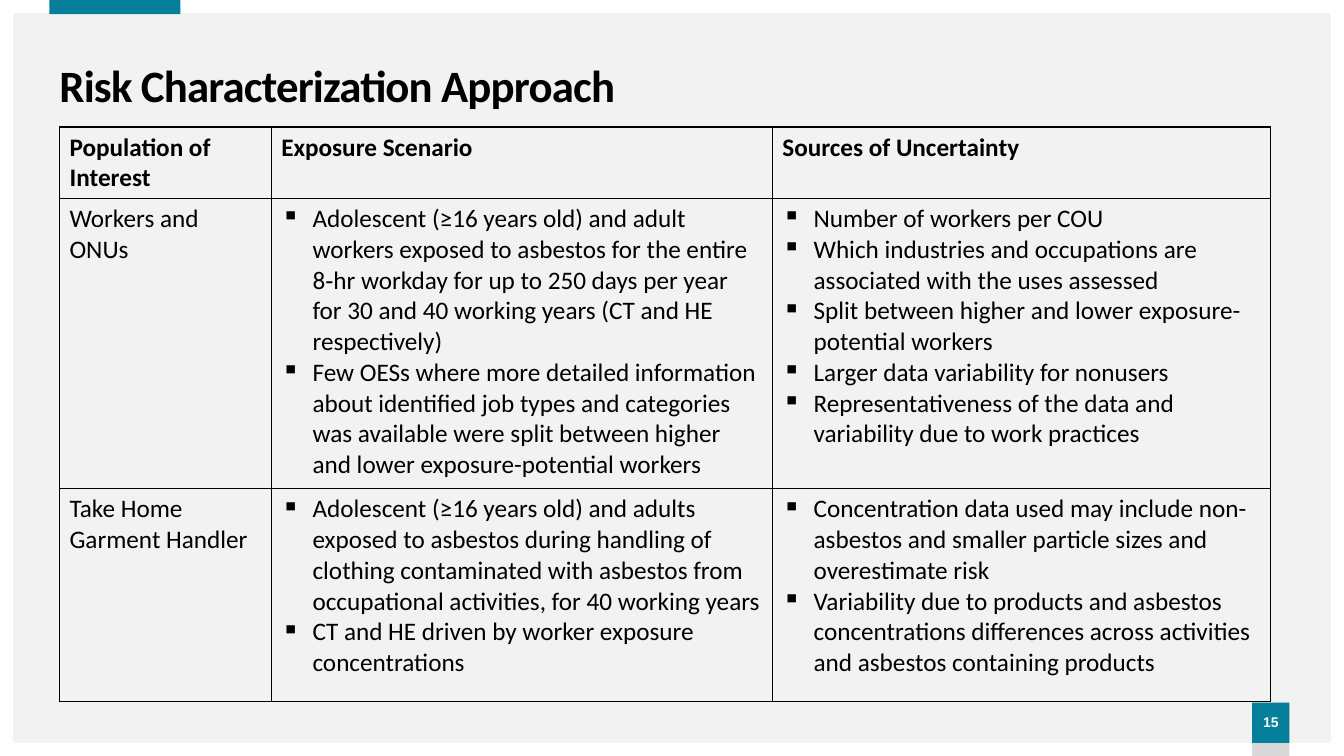
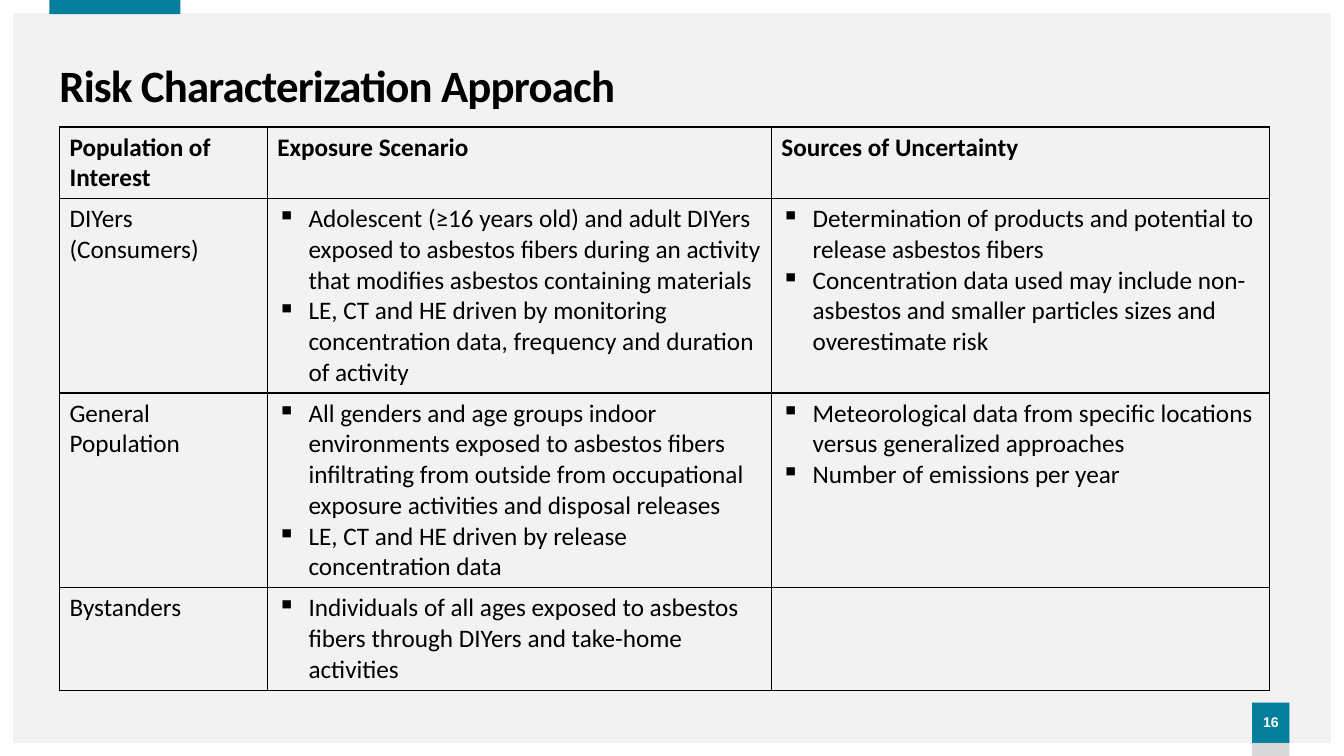
from lxml import etree
from pptx import Presentation
from pptx.dml.color import RGBColor
from pptx.enum.shapes import MSO_SHAPE
from pptx.enum.text import MSO_ANCHOR, PP_ALIGN
from pptx.oxml.ns import qn
from pptx.util import Inches, Pt

FRAME, RECTANGLE = MSO_SHAPE.FRAME, MSO_SHAPE.RECTANGLE
MIDDLE, CENTER = MSO_ANCHOR.MIDDLE, PP_ALIGN.CENTER

COLORS = {
    "background": "F2F2F2",
    "frame": "FFFFFF",
    "accent": "067F9C",
    "shade": "D9D9D9",
    "text": "000000",
    "number": "FFFFFF",
}
TITLE = "Risk Characterization Approach"
HEADERS = ("Population of Interest", "Exposure Scenario", "Sources of Uncertainty")
BULLET_INDENT = Inches(0.31)
BORDER_SIDES = ("lnL", "lnR", "lnT", "lnB")

# Each row: population, exposure scenarios, sources of uncertainty
OCCUPATIONAL_ROWS = [
    ("Workers and ONUs",
     ["Adolescent (≥16 years old) and adult workers exposed to asbestos for the entire "
      "8‐hr workday for up to 250 days per year for 30 and 40 working years "
      "(CT and HE respectively)",
      "Few OESs where more detailed information about identified job types and categories "
      "was available were split between higher and lower exposure-potential workers"],
     ["Number of workers per COU",
      "Which industries and occupations are associated with the uses assessed",
      "Split between higher and lower exposure-potential workers",
      "Larger data variability for nonusers",
      "Representativeness of the data and variability due to work practices"]),
    ("Take Home Garment Handler",
     ["Adolescent (≥16 years old) and adults exposed to asbestos during handling of "
      "clothing contaminated with asbestos from occupational activities, "
      "for 40 working years",
      "CT and HE driven by worker exposure concentrations"],
     ["Concentration data used may include non-asbestos and smaller particle sizes "
      "and overestimate risk",
      "Variability due to products and asbestos concentrations differences across "
      "activities and asbestos containing products"]),
]
CONSUMER_ROWS = [
    ("DIYers (Consumers)",
     ["Adolescent (≥16 years old) and adult DIYers exposed to asbestos fibers during "
      "an activity that modifies asbestos containing materials",
      "LE, CT and HE driven by monitoring concentration data, frequency and duration "
      "of activity"],
     ["Determination of products and potential to release asbestos fibers",
      "Concentration data used may include non-asbestos and smaller particles sizes "
      "and overestimate risk"]),
    ("General Population",
     ["All genders and age groups indoor environments exposed to asbestos fibers "
      "infiltrating from outside from occupational exposure activities and "
      "disposal releases",
      "LE, CT and HE driven by release concentration data"],
     ["Meteorological data from specific locations versus generalized approaches",
      "Number of emissions per year"]),
    ("Bystanders",
     ["Individuals of all ages exposed to asbestos fibers through DIYers and "
      "take-home activities"],
     []),
]


def color(name):
    return RGBColor.from_string(COLORS[name])


def style_font(para, size, color_name="text", bold=False, name="Calibri"):
    font = para.font
    font.name, font.size, font.bold = name, Pt(size), bold
    font.color.rgb = color(color_name)


def add_block(page, preset, left, top, width, height, color_name):
    block = page.shapes.add_shape(
        preset, Inches(left), Inches(top), Inches(width), Inches(height))
    block.shadow.inherit = False
    block.fill.solid()
    block.fill.fore_color.rgb = color(color_name)
    block.line.fill.background()
    return block


def add_title(page):
    box = page.shapes.add_textbox(Inches(0.49), Inches(0.58), Inches(12.22), Inches(0.59))
    frame = box.text_frame
    frame.word_wrap = True
    frame.vertical_anchor = MIDDLE
    para = frame.paragraphs[0]
    para.text = TITLE
    para.line_spacing = 0.9
    style_font(para, 32, bold=True)
    para._p.pPr.find(qn("a:defRPr")).set("spc", "-60")


def add_page_number(page, number):
    add_block(page, RECTANGLE, 12.42, 6.97, 0.37, 0.53, "shade")
    tab = add_block(page, RECTANGLE, 12.42, 6.97, 0.37, 0.4, "accent")
    frame = tab.text_frame
    frame.margin_left = frame.margin_right = 0
    frame.vertical_anchor = MIDDLE
    para = frame.paragraphs[0]
    para.text = str(number)
    para.alignment = CENTER
    para.line_spacing = 0.9
    style_font(para, 10, "number", bold=True, name="Arial")


def add_page(deck, number):
    """Add a page with the frame, band, number and title that all pages share."""
    page = deck.slides.add_slide(deck.slide_layouts[6])
    border = add_block(page, FRAME, 0, 0, 13.33, 7.5, "frame")
    border.adjustments[0] = 0.017
    add_block(page, RECTANGLE, 0.49, 0, 1.3, 0.14, "accent")
    add_page_number(page, number)
    add_title(page)
    return page


def add_bullet(para):
    properties = para._p.get_or_add_pPr()
    properties.set("marL", str(BULLET_INDENT))
    properties.set("indent", str(-BULLET_INDENT))
    etree.SubElement(properties, qn("a:buChar")).set("char", "▪")


def outline_cell(cell):
    """Draw thin lines on all sides of a cell and leave it unfilled."""
    properties = cell._tc.get_or_add_tcPr()
    for side in BORDER_SIDES:
        line = etree.SubElement(properties, qn(f"a:{side}"), w=str(Pt(1)))
        fill = etree.SubElement(line, qn("a:solidFill"))
        etree.SubElement(fill, qn("a:srgbClr"), val=COLORS["text"])
    cell.fill.background()


def fill_cell(cell, content, bold):
    """Write a string as plain text, or a list as bullets."""
    outline_cell(cell)
    bulleted = isinstance(content, list)
    frame = cell.text_frame
    for index, text in enumerate(content if bulleted else [content]):
        para = frame.paragraphs[0] if index == 0 else frame.add_paragraph()
        para.text = text
        if bulleted:
            add_bullet(para)
        style_font(para, 18, bold=bold)


def add_risk_table(page, widths, heights, body):
    rows = [HEADERS, *body]
    table = page.shapes.add_table(
        len(rows), len(HEADERS), Inches(0.59), Inches(1.26),
        Inches(sum(widths)), Inches(sum(heights))).table
    table.first_row = table.horz_banding = False
    for column, width in zip(table.columns, widths):
        column.width = Inches(width)
    for row_index, (contents, height) in enumerate(zip(rows, heights)):
        table.rows[row_index].height = Inches(height)
        for column_index, content in enumerate(contents):
            fill_cell(table.cell(row_index, column_index), content, row_index == 0)


def main():
    deck = Presentation()
    deck.slide_width, deck.slide_height = Inches(13.33), Inches(7.5)
    background = deck.slide_master.background.fill
    background.solid()
    background.fore_color.rgb = color("background")

    add_risk_table(add_page(deck, 15), (2.1, 4.97, 4.94),
                   (0.71, 2.88, 2.11), OCCUPATIONAL_ROWS)
    add_risk_table(add_page(deck, 16), (2.06, 5, 4.94),
                   (0.71, 1.93, 1.93, 1.02), CONSUMER_ROWS)
    deck.save("out.pptx")


if __name__ == "__main__":
    main()
